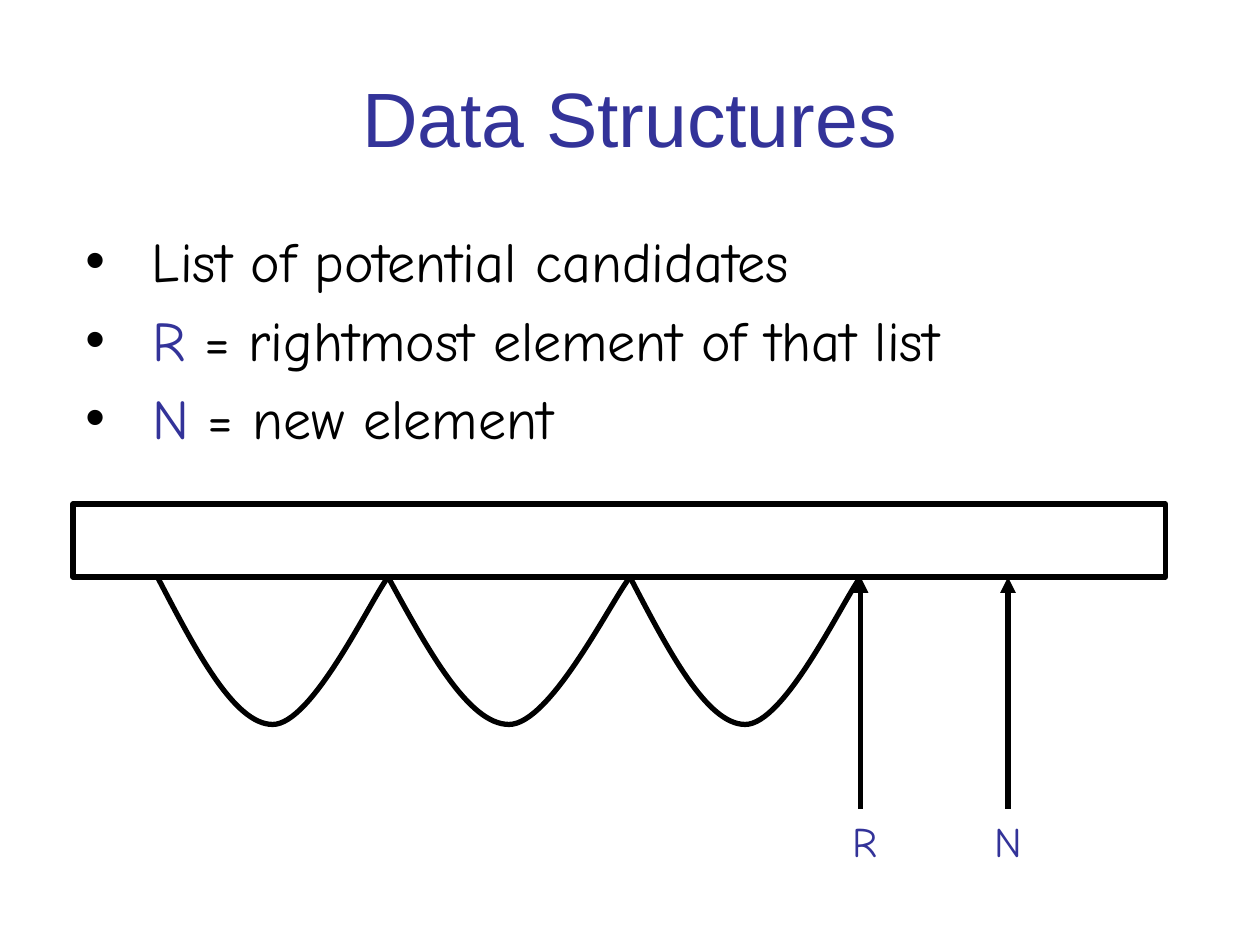
from lxml import etree
from pptx import Presentation, util as u
from pptx.dml.color import RGBColor
from pptx.enum import shapes, text
from pptx.oxml.ns import qn

INK, ACCENT = "000000", "333399"
HEADING_FONT, HAND_FONT = "Arial", "Comic Neue"
LIST_LEFT, LIST_TOP, LIST_WIDTH, LIST_HEIGHT = 0.58, 4, 8.67, 0.58
LIST_BOTTOM = LIST_TOP + LIST_HEIGHT
CANDIDATES = [1.25, 3.08, 5, 6.83]
ARC_DEPTH = 1.17
ARC_SHARES = [(1 / 6, 0.5), (1 / 3, 1), (0.5, 1), (0.67, 1), (0.92, 0.17), (1, 0)]
POINTER_BOTTOM = 6.42
POINTERS = [("R", 6.83, 6.67, 0.38), ("N", 8, 7.58, 0.63)]
BULLETS = [
    [(" List of potential candidates", INK)],
    [(" ", INK), ("R", ACCENT), (" = rightmost element of that list", INK)],
    [(" ", INK), ("N", ACCENT), (" = new element", INK)],
]


def color(hex_code):
    return RGBColor.from_string(hex_code)


def style_line(line):
    line.color.rgb = color(INK)
    line.width = u.Pt(3)


def style_run(run, font, size, hex_code):
    run.font.name = font
    run.font.size = u.Pt(size)
    run.font.color.rgb = color(hex_code)


def add_text_frame(slide, *box):
    frame = slide.shapes.add_textbox(*map(u.Inches, box)).text_frame
    frame.word_wrap = True
    return frame


def add_label(slide, wording, box, font, size, align):
    frame = add_text_frame(slide, *box)
    frame.text = wording
    frame.vertical_anchor = text.MSO_ANCHOR.MIDDLE
    paragraph = frame.paragraphs[0]
    paragraph.alignment = align
    style_run(paragraph.runs[0], font, size, ACCENT)


def format_bullet(paragraph):
    properties = paragraph._p.get_or_add_pPr()
    indent = u.Inches(0.38)
    properties.set("marL", str(indent))
    properties.set("indent", str(-indent))
    spacing = etree.SubElement(properties, qn("a:spcBef"))
    etree.SubElement(spacing, qn("a:spcPct"), val="20000")
    etree.SubElement(properties, qn("a:buFont"), typeface=HEADING_FONT)
    etree.SubElement(properties, qn("a:buChar"), char="•")


def add_bullets(slide):
    frame = add_text_frame(slide, 0.58, 1.75, 9, 4.95)
    for index, pieces in enumerate(BULLETS):
        paragraph = frame.add_paragraph() if index else frame.paragraphs[0]
        format_bullet(paragraph)
        for wording, hex_code in pieces:
            run = paragraph.add_run()
            run.text = wording
            style_run(run, HAND_FONT, 32, hex_code)


def add_list_bar(slide):
    box = map(u.Inches, (LIST_LEFT, LIST_TOP, LIST_WIDTH, LIST_HEIGHT))
    bar = slide.shapes.add_shape(shapes.MSO_SHAPE.RECTANGLE, *box)
    bar.shadow.inherit = False
    bar.fill.background()
    style_line(bar.line)


def add_arc(slide, start, end):
    points = [(u.Inches(start + x * (end - start)), u.Inches(LIST_BOTTOM + y * ARC_DEPTH))
              for x, y in ARC_SHARES]
    builder = slide.shapes.build_freeform(u.Inches(start), u.Inches(LIST_BOTTOM))
    builder.add_line_segments(points, close=False)
    arc = builder.convert_to_shape()
    arc.shadow.inherit = False
    arc.fill.background()
    style_line(arc.line)
    outline = next(arc._element.iter(qn("a:path")))
    steps = outline.findall(qn("a:lnTo"))
    for first in range(0, len(steps), 3):
        curve = etree.SubElement(outline, qn("a:cubicBezTo"))
        for step in steps[first:first + 3]:
            curve.append(step[0])
            outline.remove(step)


def add_pointer(slide, x):
    pointer = slide.shapes.add_connector(
        shapes.MSO_CONNECTOR.STRAIGHT,
        *map(u.Inches, (x, POINTER_BOTTOM, x, LIST_BOTTOM)))
    style_line(pointer.line)
    etree.SubElement(pointer.line._get_or_add_ln(), qn("a:tailEnd"), type="triangle")
    etree.SubElement(pointer._element.spPr, qn("a:effectLst"))


def main():
    deck = Presentation()
    deck.slide_width, deck.slide_height = u.Inches(10), u.Inches(7.5)
    slide = deck.slides.add_slide(deck.slide_layouts[6])
    add_label(slide, "Data Structures", (0.5, 0.3, 9, 1.25), HEADING_FONT, 44,
              text.PP_ALIGN.CENTER)
    add_bullets(slide)
    add_list_bar(slide)
    for start, end in zip(CANDIDATES, CANDIDATES[1:]):
        add_arc(slide, start, end)
    for name, x, left, width in POINTERS:
        add_pointer(slide, x)
        add_label(slide, name, (left, POINTER_BOTTOM, width, 0.5), HAND_FONT, 24,
                  text.PP_ALIGN.RIGHT)
    deck.save("out.pptx")


if __name__ == "__main__":
    main()
